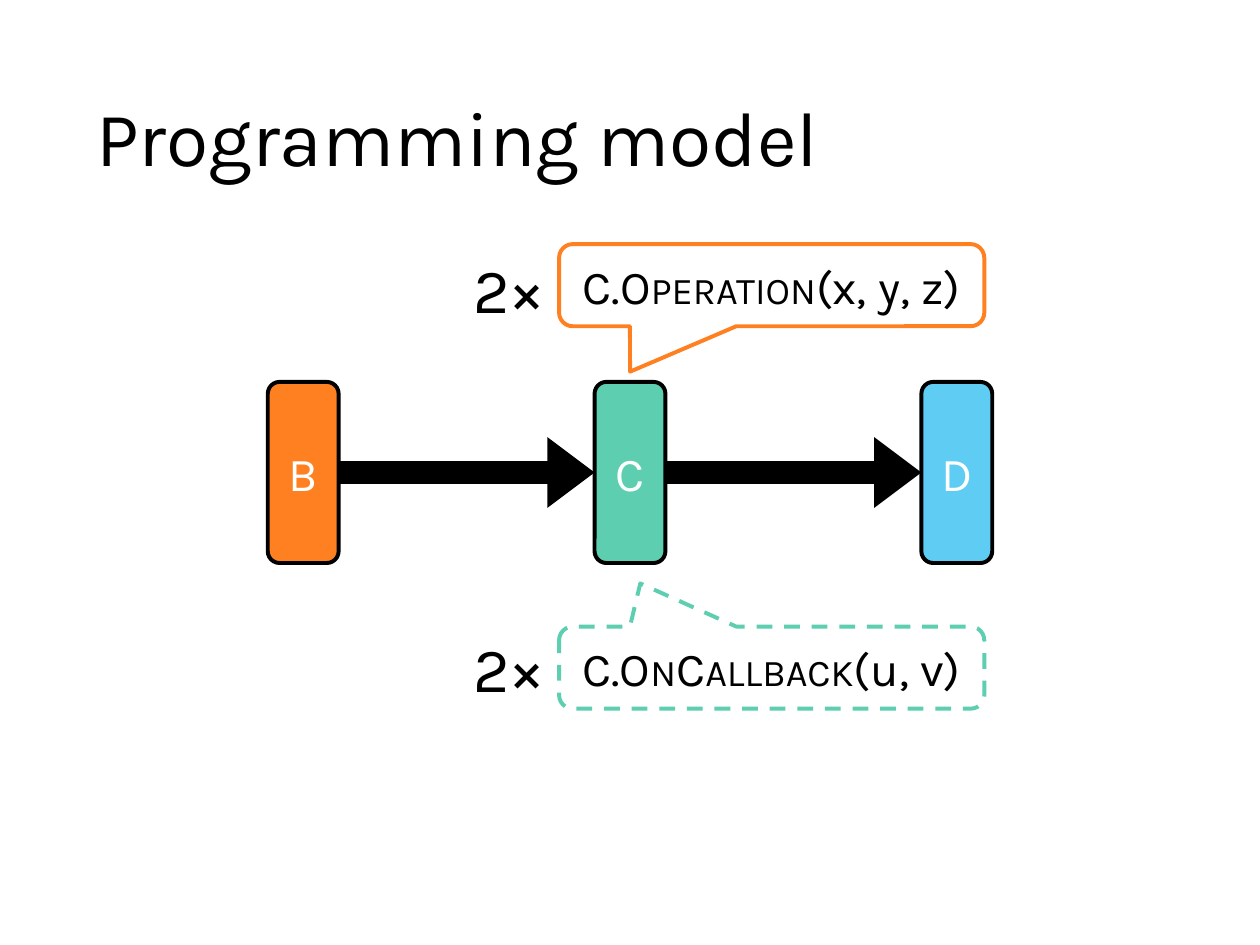
from pptx import Presentation
from pptx import util as u
from pptx.dml.color import RGBColor
from pptx.enum import dml, shapes, text
from pptx.oxml.ns import qn
from lxml import etree

Pt = u.Pt
FONT = "Karla"
BLACK, WHITE = "000000", "FFFFFF"
ORANGE, GREEN, BLUE = "FF8021", "5DCEAF", "5ECCF3"


def rgb(value):
    return RGBColor.from_string(value)


def format_run(r, size, color):
    r.font.name = FONT
    r.font.size = Pt(size)
    r.font.color.rgb = rgb(color)


def add_title(s, title):
    sp = s.shapes.title
    sp.left, sp.top, sp.width, sp.height = Pt(66), Pt(38.2), Pt(828), Pt(139)
    tf = sp.text_frame
    tf.text = title
    tf.vertical_anchor = text.MSO_ANCHOR.MIDDLE
    p = tf.paragraphs[0]
    p.alignment = text.PP_ALIGN.LEFT
    p.line_spacing = 0.9
    format_run(p.runs[0], 58.7, BLACK)


def add_box(s, kind, x, y, w, h, fill, line):
    """Outlined shape with an empty, centred paragraph."""
    sp = s.shapes.add_shape(kind, Pt(x), Pt(y), Pt(w), Pt(h))
    sp.shadow.inherit = False
    sp.fill.solid()
    sp.fill.fore_color.rgb = rgb(fill)
    sp.line.color.rgb = rgb(line)
    sp.line.width = Pt(3)
    tf = sp.text_frame
    tf.vertical_anchor = text.MSO_ANCHOR.MIDDLE
    tf.paragraphs[0].alignment = text.PP_ALIGN.CENTER
    return sp


def add_node(s, x, label, fill):
    sp = add_box(s, shapes.MSO_SHAPE.ROUNDED_RECTANGLE, x, 291, 54, 138, fill, BLACK)
    r = sp.text_frame.paragraphs[0].add_run()
    r.text = label
    format_run(r, 36, WHITE)
    return sp


def add_arrow(s, start, end):
    c = s.shapes.add_connector(shapes.MSO_CONNECTOR.STRAIGHT, 0, 0, 0, 0)
    c.begin_connect(start, 3)
    c.end_connect(end, 1)
    c.line.color.rgb = rgb(BLACK)
    c.line.width = Pt(18)
    etree.SubElement(c.line._get_or_add_ln(), qn("a:tailEnd"),
                     type="triangle", w="med", len="sm")
    etree.SubElement(c._element.spPr, qn("a:effectLst"))


def add_callout(s, y, color, tip, name, args):
    """Call bubble: the method name is in small capitals."""
    sp = add_box(s, shapes.MSO_SHAPE.ROUNDED_RECTANGULAR_CALLOUT,
                 426, y, 324, 62.6, WHITE, color)
    sp.adjustments[0], sp.adjustments[1] = tip
    p = sp.text_frame.paragraphs[0]
    for part in ("C.", name, args):
        r = p.add_run()
        r.text = part
        format_run(r, 36, BLACK)
        if part == name:
            r.font._element.set("cap", "small")
    return sp


def add_count(s, y):
    tf = s.shapes.add_textbox(Pt(354), Pt(y), Pt(126), Pt(65.5)).text_frame
    tf.word_wrap = True
    tf.auto_size = text.MSO_AUTO_SIZE.SHAPE_TO_FIT_TEXT
    tf.text = "2×"
    format_run(tf.paragraphs[0].runs[0], 48, BLACK)


def main():
    prs = Presentation()
    prs.slide_width, prs.slide_height = Pt(960), Pt(720)
    s = prs.slides.add_slide(prs.slide_layouts[5])
    add_title(s, "Programming model")

    # Chain of nodes
    nodes = [add_node(s, 204 + 249 * i, label, fill)
             for i, (label, fill) in enumerate(zip("BCD", (ORANGE, GREEN, BLUE)))]
    for start, end in zip(nodes, nodes[1:]):
        add_arrow(s, start, end)

    # Operation above, callback below
    add_callout(s, 186, ORANGE, (-0.333, 1.053), "Operation", "(x, y, z)")
    callback = add_callout(s, 477.4, GREEN, (-0.309, -1.025), "OnCallback", "(u, v)")
    callback.line.dash_style = dml.MSO_LINE.DASH

    # Call counts
    for y in (476, 187):
        add_count(s, y)

    prs.save("out.pptx")


if __name__ == "__main__":
    main()
